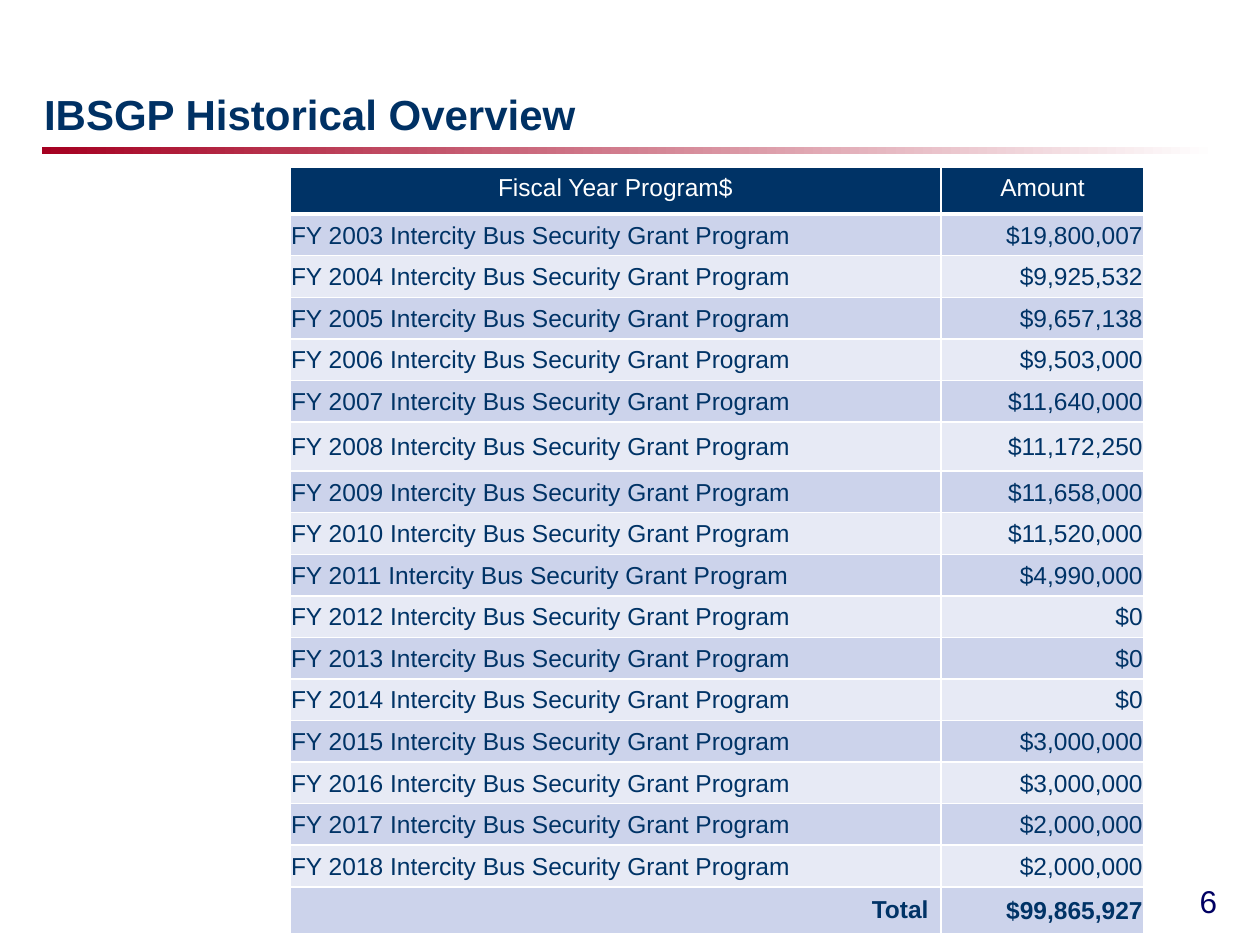
from lxml.etree import SubElement as Sub
from pptx import Presentation
from pptx.dml.color import RGBColor as RGB
from pptx.enum.shapes import MSO_SHAPE as Shape
from pptx.enum.text import MSO_ANCHOR as Anchor, PP_ALIGN as Align
from pptx.oxml.ns import qn
from pptx.util import Inches, Pt

NAVY, WHITE = "003366", "FFFFFF"
BANDS = ["CCD3EB", "E7EAF5"]
FIRST = 2003
SUMS = [19800007, 9925532, 9657138, 9503000, 11640000, 11172250, 11658000, 11520000,
        4990000, 0, 0, 0, 3000000, 3000000, 2000000, 2000000]
TOTAL = 99865927


def paint(item, code):
    item.rgb = RGB.from_string(code)


def box(left, top, width, height):
    return [Inches(n) for n in (left, top, width, height)]


def write(frame, text, size, color, align=Align.LEFT, bold=False):
    frame.text = text
    para = frame.paragraphs[0]
    para.alignment = align
    font = para.runs[0].font
    font.name, font.size, font.bold = "Arial", Pt(size), bold
    paint(font.color, color)


def add_title(slide, text):
    title = slide.shapes.title
    title.left, title.top, title.width, title.height = box(0.25, 0, 9.31, 1.15)
    write(title.text_frame, text, 24, "003164", bold=True)
    title.text_frame.vertical_anchor = Anchor.BOTTOM


def add_rule(slide):
    rule = slide.shapes.add_shape(Shape.RECTANGLE, *box(0.33, 1.17, 9.33, 0.05))
    rule.shadow.inherit = False
    rule.line.fill.background()
    rule.fill.gradient()
    rule.fill.gradient_angle = 0
    for stop, code in zip(rule.fill.gradient_stops, ["A50021", WHITE]):
        paint(stop.color, code)


def edge(cell, base):
    props = cell._tc.get_or_add_tcPr()
    for side, width in [("L", 1), ("R", 1), ("T", 1), ("B", base)]:
        line = Sub(props, qn("a:ln" + side), w=str(Pt(width)))
        Sub(Sub(line, qn("a:solidFill")), qn("a:srgbClr"), val=WHITE)


def fill_cell(cell, text, back, color, align, bold=False, base=1):
    edge(cell, base)
    cell.fill.solid()
    paint(cell.fill.fore_color, back)
    write(cell.text_frame, text, 14, color, align, bold)


def center(cell, tight=True):
    cell.vertical_anchor = Anchor.MIDDLE
    if tight:
        cell.margin_left = cell.margin_right = cell.margin_top = Inches(0.01)
        cell.margin_bottom = 0


def add_grid(slide):
    rows = [(f"FY {year} Intercity Bus Security Grant Program", value)
            for year, value in enumerate(SUMS, FIRST)]
    rows.append(("Total", TOTAL))
    last = len(rows)
    grid = slide.shapes.add_table(last + 1, 2, *box(2.3, 1.33, 6.78, 6.08)).table
    grid.first_row = grid.horz_banding = False
    for col, width in zip(grid.columns, [5.17, 1.61]):
        col.width = Inches(width)
    tall = {0: 0.37, 6: 0.39, last: 0.37}
    for num, row in enumerate(grid.rows):
        row.height = Inches(tall.get(num, 0.33))
    for col, text in enumerate(["Fiscal Year Program$", "Amount"]):
        fill_cell(grid.cell(0, col), text, NAVY, WHITE, Align.CENTER, base=3)
    for num, (name, value) in enumerate(rows, 1):
        back, end = BANDS[(num - 1) % 2], num == last
        label, amount = grid.cell(num, 0), grid.cell(num, 1)
        fill_cell(label, name, back, NAVY, Align.RIGHT if end else Align.LEFT, end)
        fill_cell(amount, f"${value:,}", back, NAVY, Align.RIGHT, end)
        center(label, not end)
        center(amount)


def add_number(slide, text):
    frame = slide.shapes.add_textbox(*box(7.33, 6.83, 2.33, 0.52)).text_frame
    frame.word_wrap = True
    frame.margin_left = frame.margin_right = 0
    frame.vertical_anchor = Anchor.BOTTOM
    write(frame, text, 18, "000063", Align.RIGHT)


def main():
    deck = Presentation()
    deck.slide_width, deck.slide_height = Inches(10), Inches(7.5)
    slide = deck.slides.add_slide(deck.slide_layouts[5])
    add_rule(slide)
    add_title(slide, "IBSGP Historical Overview")
    add_grid(slide)
    add_number(slide, "6")
    deck.save("out.pptx")


if __name__ == "__main__":
    main()
